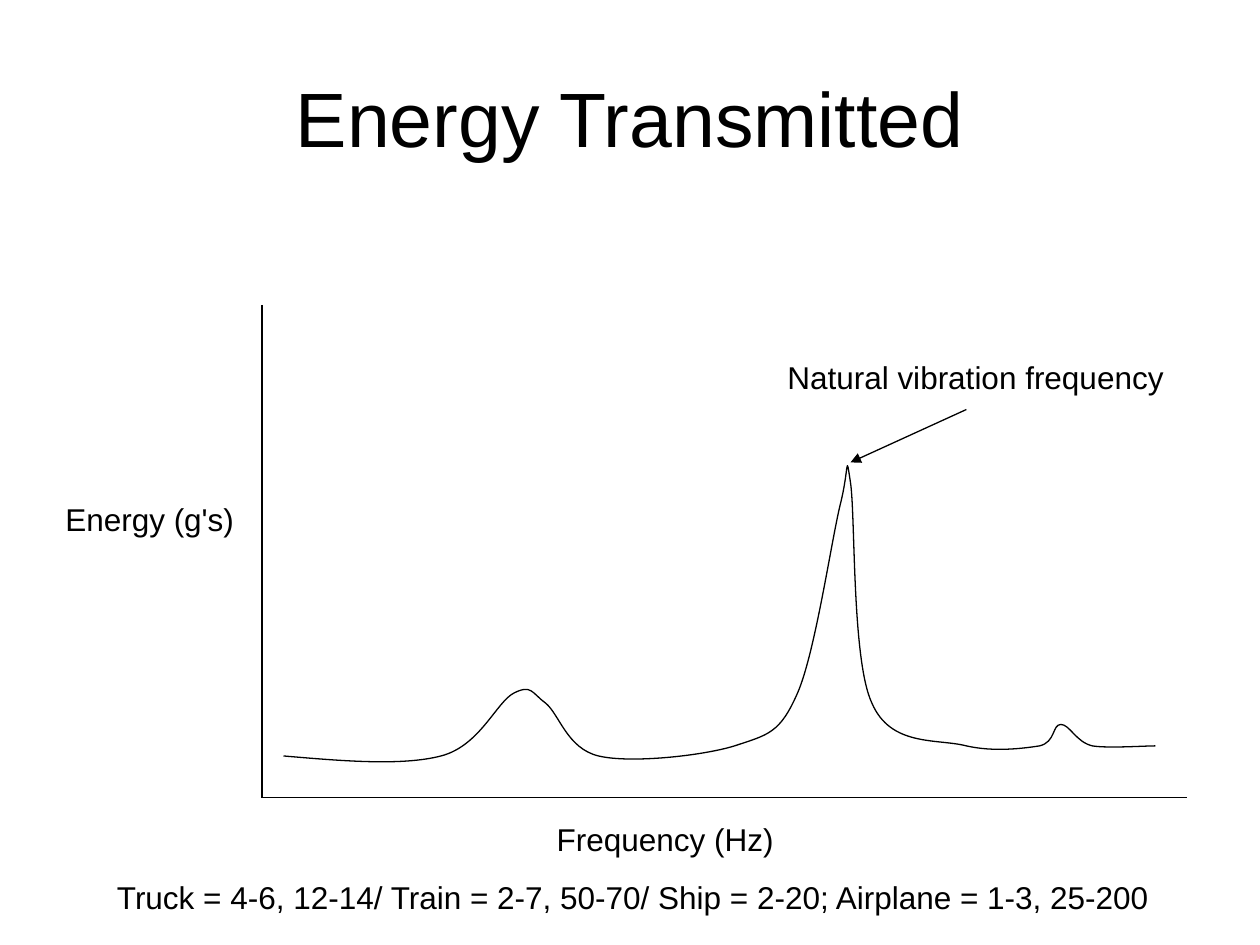
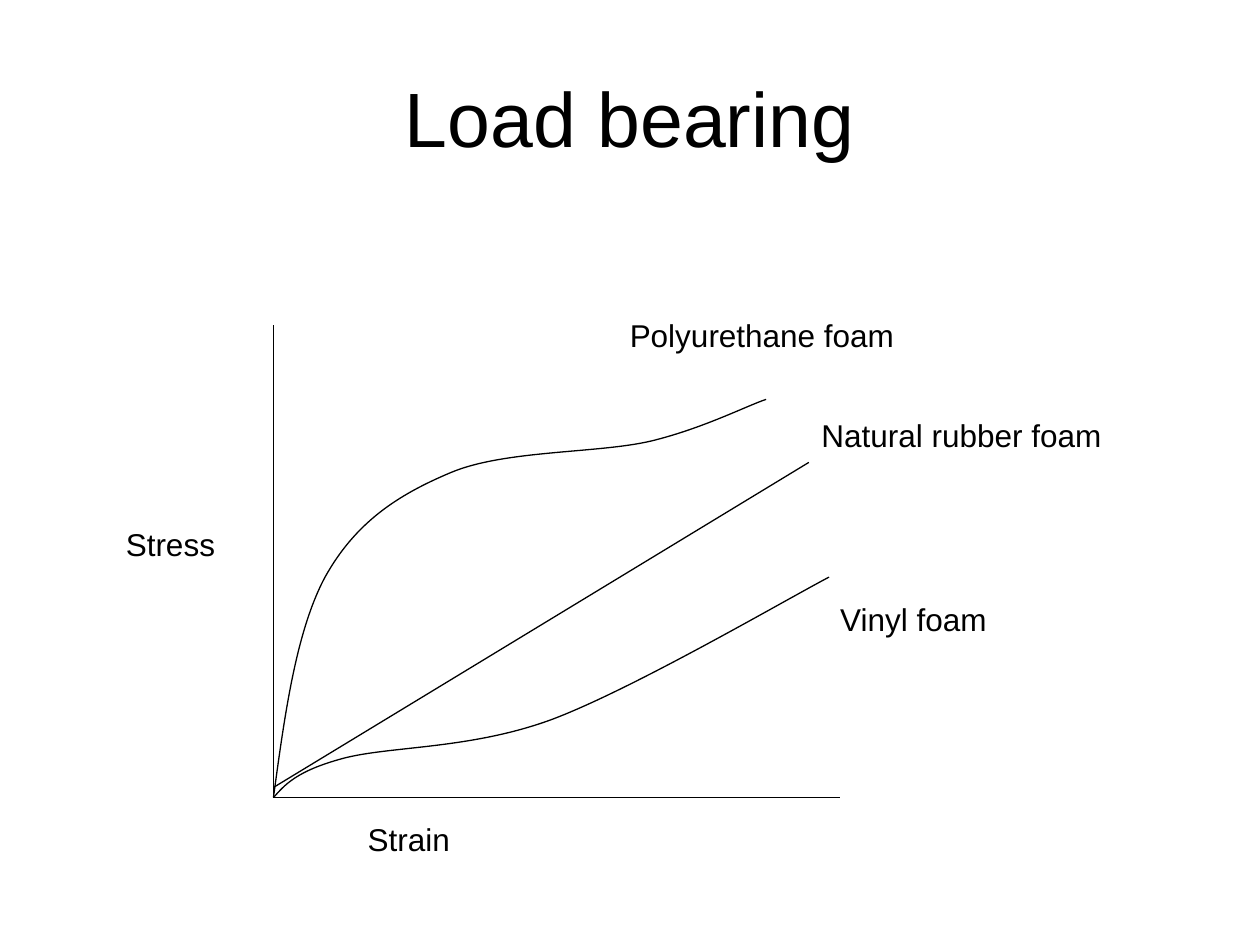
"""Build two slides of hand-drawn style graphs on packaging foam behaviour."""
from dataclasses import dataclass

from pptx import Presentation
from pptx.dml.color import RGBColor
from pptx.enum.shapes import MSO_CONNECTOR as Connector
from pptx.enum.text import MSO_ANCHOR as Anchor, MSO_AUTO_SIZE as AutoSize, PP_ALIGN as Align
from pptx.oxml.ns import qn
from pptx.util import Inches, Pt
from lxml.etree import SubElement


@dataclass(frozen=True)
class Theme:
    font: str = "Arial"
    ink: RGBColor = RGBColor(0, 0, 0)
    paper: RGBColor = RGBColor(255, 255, 255)
    title_size: int = 44
    label_size: int = 18
    line_width: float = 0.75


def write_text(frame, text, *, theme, size, align=Align.LEFT, anchor=Anchor.TOP,
               wrap=False, auto_size=AutoSize.SHAPE_TO_FIT_TEXT):
    frame.word_wrap = wrap
    frame.auto_size = auto_size
    frame.vertical_anchor = anchor
    paragraph = frame.paragraphs[0]
    paragraph.alignment = align
    run = paragraph.add_run()
    run.text = text
    run.font.name = theme.font
    run.font.size = Pt(size)
    run.font.color.rgb = theme.ink


class GraphDeck:
    def __init__(self, theme):
        self.theme = theme
        self.presentation = Presentation()
        self.presentation.slide_width = Inches(10)
        self.presentation.slide_height = Inches(7.5)
        self.slide = None

    def add_slide(self, title):
        self.slide = self.presentation.slides.add_slide(self.presentation.slide_layouts[5])
        fill = self.slide.background.fill
        fill.solid()
        fill.fore_color.rgb = self.theme.paper
        shape = self.slide.shapes.title
        shape.left, shape.top = Inches(0.5), Inches(0.3)
        shape.width, shape.height = Inches(9), Inches(1.25)
        write_text(shape.text_frame, title, theme=self.theme, size=self.theme.title_size,
                   align=Align.CENTER, anchor=Anchor.MIDDLE, wrap=True,
                   auto_size=AutoSize.NONE)

    def add_label(self, text, left, top, width):
        box = self.slide.shapes.add_textbox(Inches(left), Inches(top), Inches(width), Inches(0.4))
        write_text(box.text_frame, text, theme=self.theme, size=self.theme.label_size)

    def style_line(self, line):
        line.color.rgb = self.theme.ink
        line.width = Pt(self.theme.line_width)

    def add_line(self, start, end, arrow=False):
        connector = self.slide.shapes.add_connector(
            Connector.STRAIGHT, *map(Inches, start), *map(Inches, end))
        self.style_line(connector.line)
        properties = connector._element.spPr
        if arrow:
            SubElement(properties.find(qn("a:ln")), qn("a:tailEnd"), type="triangle")
        SubElement(properties, qn("a:effectLst"))

    def add_axes(self, left, top, right, bottom):
        self.add_line((left, top), (left, bottom))
        self.add_line((left, bottom), (right, bottom))

    def add_curve(self, start, *segments):
        """Draw cubic segments, each given as two control points and an end point."""
        points = [tuple(map(Inches, point)) for segment in segments
                  for point in zip(segment[::2], segment[1::2])]
        builder = self.slide.shapes.build_freeform(*map(Inches, start))
        builder.add_line_segments(points, close=False)
        shape = builder.convert_to_shape()
        shape.shadow.inherit = False
        shape.fill.background()
        self.style_line(shape.line)
        outline = next(shape._element.iter(qn("a:path")))
        straight_parts = outline.findall(qn("a:lnTo"))
        for first in range(0, len(straight_parts), 3):
            cubic = SubElement(outline, qn("a:cubicBezTo"))
            for part in straight_parts[first:first + 3]:
                cubic.append(part[0])
                outline.remove(part)


def build_energy_slide(deck):
    deck.add_slide("Energy Transmitted")
    deck.add_axes(2.08, 2.42, 9.42, 6.33)
    deck.add_curve(
        (2.25, 6),
        (2.72, 6.04, 3.19, 6.08, 3.5, 6),
        (3.81, 5.92, 3.94, 5.57, 4.08, 5.5),
        (4.22, 5.43, 4.22, 5.5, 4.33, 5.58),
        (4.44, 5.67, 4.5, 5.94, 4.75, 6),
        (5, 6.06, 5.57, 6, 5.83, 5.92),
        (6.1, 5.83, 6.19, 5.82, 6.33, 5.5),
        (6.47, 5.18, 6.6, 4.28, 6.67, 4),
        (6.74, 3.72, 6.71, 3.57, 6.75, 3.83),
        (6.79, 4.1, 6.76, 5.24, 6.92, 5.58),
        (7.07, 5.93, 7.44, 5.86, 7.67, 5.92),
        (7.89, 5.97, 8.12, 5.94, 8.25, 5.92),
        (8.38, 5.89, 8.35, 5.75, 8.42, 5.75),
        (8.49, 5.75, 8.54, 5.89, 8.67, 5.92),
        (8.79, 5.94, 9.08, 5.92, 9.17, 5.92),
    )
    deck.add_label("Energy (g's)", 0.42, 3.92, 1.54)
    deck.add_label("Frequency (Hz)", 4.32, 6.46, 1.92)
    deck.add_label("Natural vibration frequency", 6.15, 2.79, 3.19)
    deck.add_line((7.67, 3.25), (6.75, 3.67), arrow=True)
    deck.add_label("Truck = 4-6, 12-14/ Train = 2-7, 50-70/ Ship = 2-20; Airplane = 1-3, 25-200",
                   0.83, 6.92, 8.42)


def build_load_slide(deck):
    origin = (2.17, 6.33)
    deck.add_slide("Load bearing")
    deck.add_axes(origin[0], 2.58, 6.67, origin[1])
    deck.add_curve(
        origin,
        (2.26, 5.67, 2.35, 5.01, 2.58, 4.58),
        (2.82, 4.15, 3.15, 3.93, 3.58, 3.75),
        (4.01, 3.57, 4.75, 3.6, 5.17, 3.5),
        (5.58, 3.4, 5.93, 3.22, 6.08, 3.17),
    )
    deck.add_curve(
        origin,
        (2.26, 6.23, 2.35, 6.12, 2.72, 6.02),
        (3.09, 5.92, 3.73, 5.95, 4.38, 5.71),
        (5.02, 5.47, 6.22, 4.77, 6.58, 4.58),
    )
    deck.add_line((origin[0], 6.25), (6.42, 3.67))
    deck.add_label("Polyurethane foam", 4.9, 2.46, 2.3)
    deck.add_label("Natural rubber foam", 6.42, 3.25, 2.42)
    deck.add_label("Vinyl foam", 6.57, 4.71, 1.37)
    deck.add_label("Strain", 2.82, 6.46, 0.85)
    deck.add_label("Stress", 0.9, 4.12, 0.91)


def main():
    deck = GraphDeck(Theme())
    build_energy_slide(deck)
    build_load_slide(deck)
    deck.presentation.save("out.pptx")


if __name__ == "__main__":
    main()
